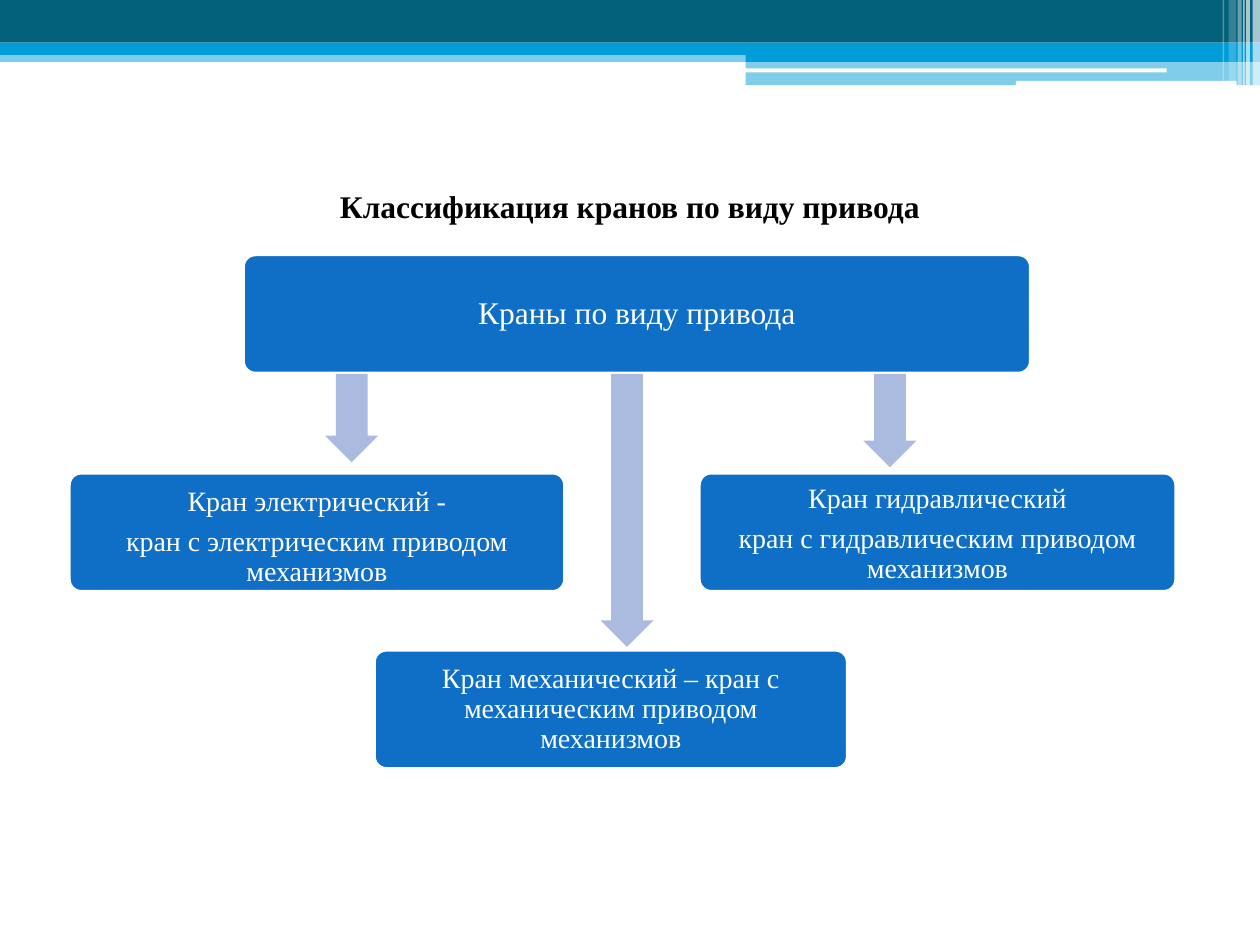
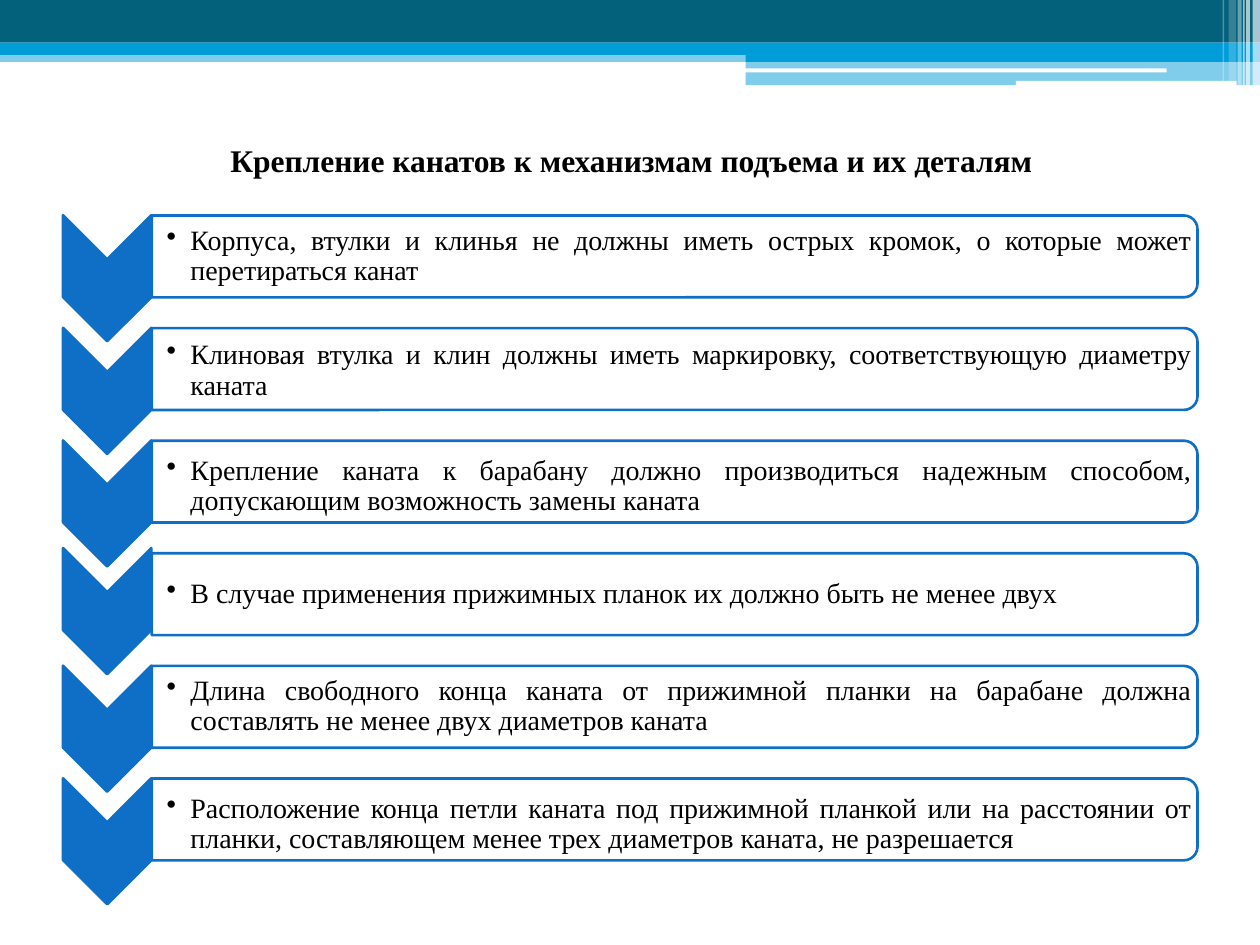
import pptx
import pptx.dml.color
import pptx.enum.shapes
import pptx.enum.text
import pptx.util
from lxml import etree
from pptx.oxml.ns import qn

Cm = pptx.util.Cm
Pt = pptx.util.Pt
SHAPE = pptx.enum.shapes.MSO_SHAPE
ALIGN = pptx.enum.text.PP_ALIGN
MIDDLE = pptx.enum.text.MSO_ANCHOR.MIDDLE

FONT = "Times New Roman"
BLACK, WHITE = "000000", "FFFFFF"
TEAL, SKY, BLUE, PALE = "04617B", "009DD9", "0F6FC6", "ABBBDF"


def color(value):
    return pptx.dml.color.RGBColor.from_string(value)


def place(page, kind, left, top, width, height, fill,
          opacity=100, outline=None, turn=0, adjust=()):
    shape = page.shapes.add_shape(kind, Cm(left), Cm(top), Cm(width), Cm(height))
    shape.shadow.inherit = False
    shape.rotation = turn
    for index, value in enumerate(adjust):
        shape.adjustments[index] = value
    shape.fill.solid()
    shape.fill.fore_color.rgb = color(fill)
    if opacity < 100:
        tint = shape._element.spPr.find(".//" + qn("a:srgbClr"))
        etree.SubElement(tint, qn("a:alpha"), val=str(opacity * 1000))
    if outline:
        shape.line.color.rgb = color(outline)
        shape.line.width = Pt(1.5)
    else:
        shape.line.fill.background()
    return shape


deck = pptx.Presentation()
deck.slide_width, deck.slide_height = Cm(25.4), Cm(19.05)

# Shared header: left, top, width, height, fill, opacity
bands = [
    (0, 1.02, 25.4, 0.23, SKY, 50),
    (0, 0, 25.4, 0.86, TEAL, 100),
    (0, 0.86, 25.4, 0.25, SKY, 100),
    (15.03, 0.99, 10.37, 0.26, SKY, 100),
    (15.03, 1.24, 10.37, 0.48, SKY, 50),
]
white_bars = [(15.02, 1.38, 8.5, 0.08), (20.48, 1.63, 4.45, 0.1)]
# Left, width, height, opacity
stripes = [
    (25.25, 0.15, 1.73, 65), (25.12, 0.08, 1.73, 65), (25.06, 0.03, 1.73, 60),
    (24.95, 0.08, 1.73, 40), (24.77, 0.15, 1.63, 20), (24.65, 0.03, 1.63, 30),
]
# Title, left, top, height
titles = [
    ("Классификация кранов по виду привода", 1.27, 3.18, 1.96),
    ("Крепление канатов к механизмам подъема и их деталям", 1.3, 2.34, 1.75),
]

pages = []
for title, left, top, height in titles:
    page = deck.slides.add_slide(deck.slide_layouts[6])
    pages.append(page)
    for band in bands:
        place(page, SHAPE.RECTANGLE, *band)
    for bar in white_bars:
        place(page, SHAPE.ROUNDED_RECTANGLE, *bar, WHITE)
    for stripe_left, width, stripe_height, opacity in stripes:
        place(page, SHAPE.RECTANGLE, stripe_left, 0, width, stripe_height, WHITE, opacity)

    box = page.shapes.add_textbox(Cm(left), Cm(top), Cm(22.86), Cm(height))
    box.text_frame.word_wrap = True
    box.text_frame.vertical_anchor = MIDDLE
    para = box.text_frame.paragraphs[0]
    para.text = title
    para.alignment = ALIGN.CENTER
    para.font.name, para.font.size, para.font.bold = FONT, Pt(18), True
    para.font.color.rgb = color(BLACK)

drive_page, rope_page = pages

# Drive types: left, top, width, text size, downward text shift, paragraphs
nodes = [
    (4.91, 5.14, 15.86, 18, 0, ["Краны по виду привода"]),
    (1.4, 9.54, 9.98, 16, 0.1,
     ["Кран электрический -", "кран с электрическим приводом механизмов"]),
    (14.1, 9.54, 9.6, 16, 0.05,
     ["Кран гидравлический", "кран с гидравлическим приводом механизмов"]),
    (7.55, 13.11, 9.53, 16, 0,
     ["Кран механический – кран с механическим приводом механизмов"]),
]
for left, top, width, size, shift, lines in nodes:
    node = place(drive_page, SHAPE.ROUNDED_RECTANGLE, left, top, width, 2.38, BLUE,
                 outline=WHITE, adjust=[0.1])
    frame = node.text_frame
    frame.word_wrap = True
    frame.vertical_anchor = MIDDLE
    frame.margin_left = frame.margin_right = Cm(0.25)
    frame.margin_top, frame.margin_bottom = Cm(0.05 + 2 * shift), Cm(0.05)
    for index, line in enumerate(lines):
        para = frame.paragraphs[0] if index == 0 else frame.add_paragraph()
        para.text = line
        para.alignment = ALIGN.CENTER
        para.line_spacing = 0.9
        para.space_after = Pt(0.35 * size)
        para.font.name, para.font.size = FONT, Pt(size)
        para.font.color.rgb = color(WHITE)

# Arrows down from the top box: centre, bottom end
arrow_top, arrow_width = 7.54, 1.07
for center, end in [(7.09, 9.32), (17.94, 9.42), (12.64, 13.04)]:
    length = end - arrow_top
    place(drive_page, SHAPE.RIGHT_ARROW, center - length / 2,
          (arrow_top + end - arrow_width) / 2, length, arrow_width, PALE,
          turn=90, adjust=[0.6, 0.5])

# Rope fastening rules: text, downward text shift, chevron offset
rules = [
    ("Корпуса, втулки и клинья не должны иметь острых кромок, "
     "о которые может перетираться канат", 0, 0),
    ("Клиновая втулка и клин должны иметь маркировку, "
     "соответствующую диаметру каната", 0.04, 0),
    ("Крепление каната к барабану должно производиться надежным способом, "
     "допускающим возможность замены каната", 0.1, 0),
    ("В случае применения прижимных планок их должно быть не менее двух", 0, -0.1),
    ("Длина свободного конца каната от прижимной планки на барабане "
     "должна составлять не менее двух диаметров каната", 0, 0),
    ("Расположение конца петли каната под прижимной планкой или на расстоянии "
     "от планки, составляющем менее трех диаметров каната, не разрешается", 0.1, 0),
]
bar_width, bar_length = 1.65, 21.08
chevron_length, chevron_width = 2.54, 1.78
text_height = 1.5
for row, (rule, shift, offset) in enumerate(rules):
    center = 5.17 + row * 2.27
    place(rope_page, SHAPE.CHEVRON, 2.16 - chevron_length / 2,
          center + 0.44 + offset - chevron_width / 2, chevron_length, chevron_width,
          BLUE, outline=BLUE, turn=90)
    place(rope_page, SHAPE.ROUND_2_SAME_RECTANGLE, 13.6 - bar_width / 2,
          center - bar_length / 2, bar_width, bar_length, WHITE, 90, BLUE, turn=90)

    box = rope_page.shapes.add_textbox(
        Cm(3.05), Cm(center + shift - text_height / 2), Cm(21), Cm(text_height))
    frame = box.text_frame
    frame.word_wrap = True
    frame.vertical_anchor = MIDDLE
    frame.margin_left = Cm(0.31)
    frame.margin_right = frame.margin_top = frame.margin_bottom = Cm(0.02)
    para = frame.paragraphs[0]
    para.text = rule
    para.alignment = ALIGN.JUSTIFY
    para.line_spacing = 0.9
    properties = para._p.get_or_add_pPr()
    properties.set("marL", str(Cm(0.48)))
    properties.set("indent", str(-Cm(0.48)))
    etree.SubElement(properties, qn("a:buChar"), char="•")
    para.font.name, para.font.size = FONT, Pt(16)
    para.font.color.rgb = color(BLACK)

deck.save("out.pptx")
